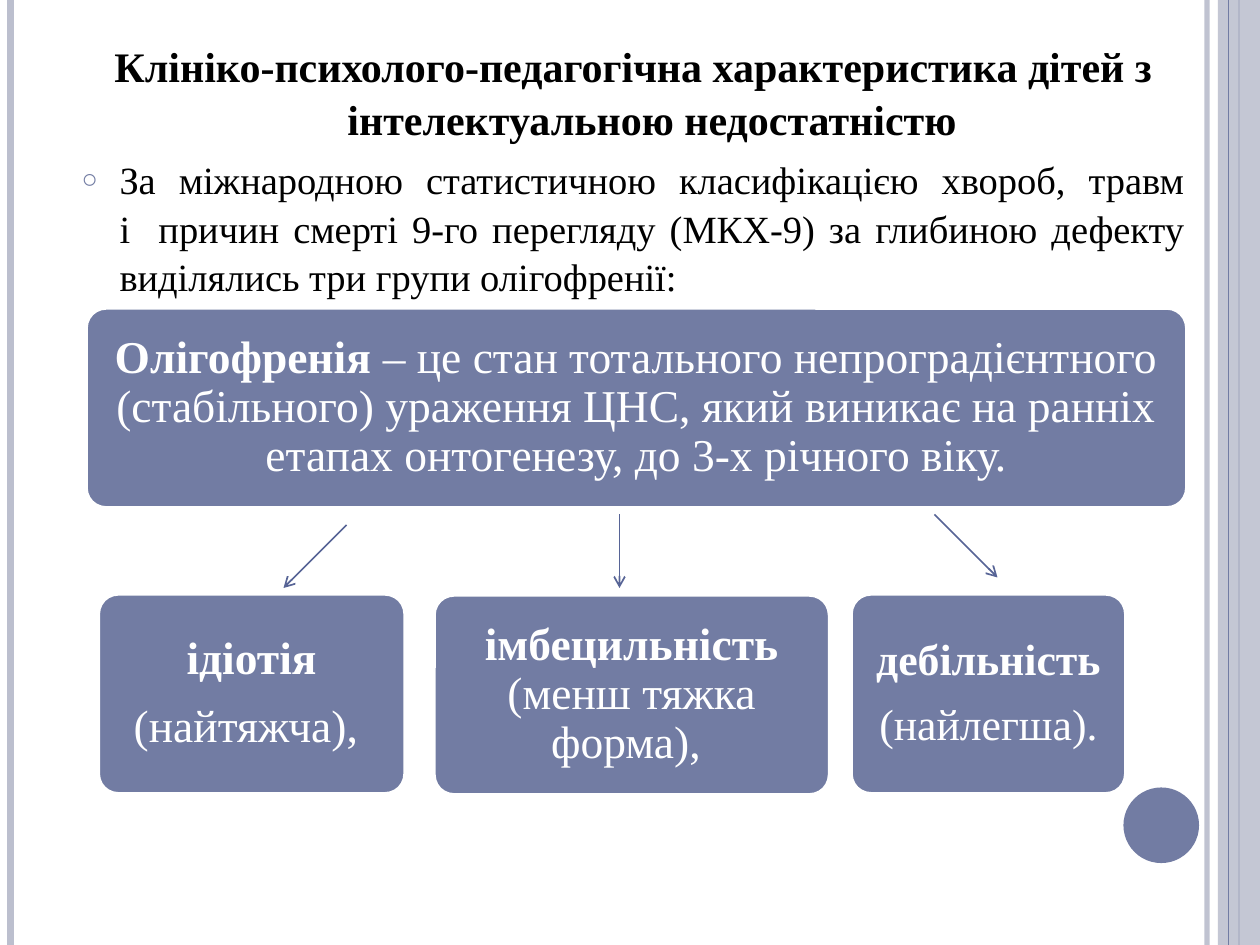
from typing import NamedTuple

from lxml import etree
from pptx import Presentation
from pptx.dml.color import RGBColor
from pptx.enum.shapes import MSO_CONNECTOR, MSO_SHAPE
from pptx.enum.text import MSO_ANCHOR, PP_ALIGN
from pptx.oxml.ns import qn
from pptx.util import Pt

STRAIGHT = MSO_CONNECTOR.STRAIGHT
RECTANGLE = MSO_SHAPE.RECTANGLE
ROUNDED = MSO_SHAPE.ROUNDED_RECTANGLE
OVAL = MSO_SHAPE.OVAL
CENTER = PP_ALIGN.CENTER
JUSTIFY = PP_ALIGN.JUSTIFY
MIDDLE = MSO_ANCHOR.MIDDLE

BLACK = RGBColor(0x00, 0x00, 0x00)
WHITE = RGBColor(0xFF, 0xFF, 0xFF)
SLATE = RGBColor(0x72, 0x7C, 0xA3)
PALE = RGBColor(0xBC, 0xBF, 0xCE)
ARROW = RGBColor(0x57, 0x64, 0x96)
FONT = "Times New Roman"
WIDTH, HEIGHT = 720, 540
HANGING = 21.6


class Piece(NamedTuple):
    text: str
    bold: bool = False


class Card(NamedTuple):
    left: float
    top: float
    width: float
    paragraphs: list[list[Piece]]
    size: float = 26
    inset: float = 7.8


class Line(NamedTuple):
    start: tuple[float, float]
    end: tuple[float, float]
    color: RGBColor
    width: float
    opacity: int = 100
    arrow: bool = False


def rail(x: float, color: RGBColor, width: float, opacity: int = 100) -> Line:
    """Describe a vertical line over the full slide height."""
    return Line((x, 0), (x, HEIGHT), color, width, opacity)


RAILS = [rail(689.8, PALE, 3, 93), rail(6, PALE, 4.5), rail(708, SLATE, 1.5)]
INNER_RAIL = rail(702, SLATE, 0.75)

CARDS = [
    Card(49.2, 176, 629, [[
        Piece("Олігофренія", True),
        Piece(" – це стан тотального непроградієнтного (стабільного) ураження ЦНС, "
              "який виникає на ранніх етапах онтогенезу, до 3-х річного віку."),
    ]]),
    Card(56.2, 339.4, 175.3, [[Piece("ідіотія", True)], [Piece("(найтяжча), ")]]),
    Card(486.3, 339.4, 157, [[Piece("дебільність", True)], [Piece("(найлегша).")]], 25, 7.2),
    Card(248, 340, 226, [[Piece("імбецильність", True), Piece(" (менш тяжка форма), ")]]),
]
CARD_HEIGHT = 114.2

ARROWS = [
    Line((198, 300), (162, 336), ARROW, 1, arrow=True),
    Line((354, 294), (354, 336), ARROW, 1, arrow=True),
    Line((534, 294), (570, 330), ARROW, 1, arrow=True),
]

TITLE = "Клініко-психолого-педагогічна характеристика дітей з інтелектуальною недостатністю"
INTRODUCTION = (
    "За  міжнародною  статистичною  класифікацією  хвороб,  травм і  причин смерті "
    "9-го перегляду (МКХ-9) за глибиною дефекту виділялись три групи олігофренії: "
)


def set_opacity(fill, opacity: int) -> None:
    """Give a solid fill element an opacity in percent."""
    color = fill.find(qn("a:srgbClr"))
    etree.SubElement(color, qn("a:alpha"), val=str(opacity * 1000))


def add_line(slide, line: Line) -> None:
    """Draw a straight line, optionally with an arrowhead at its end."""
    connector = slide.shapes.add_connector(
        STRAIGHT, *(Pt(value) for value in (*line.start, *line.end)))
    connector.line.color.rgb = line.color
    connector.line.width = Pt(line.width)
    properties = connector.element.spPr
    outline = properties.find(qn("a:ln"))
    if line.opacity < 100:
        set_opacity(outline.find(qn("a:solidFill")), line.opacity)
    if line.arrow:
        etree.SubElement(outline, qn("a:tailEnd"), type="arrow")
    etree.SubElement(properties, qn("a:effectLst"))


def add_filled(slide, kind, left: float, top: float, width: float, height: float,
               color: RGBColor):
    """Add a preset shape with a plain fill and no outline or shadow."""
    shape = slide.shapes.add_shape(kind, Pt(left), Pt(top), Pt(width), Pt(height))
    shape.shadow.inherit = False
    shape.fill.solid()
    shape.fill.fore_color.rgb = color
    shape.line.fill.background()
    return shape


def write_paragraph(frame, pieces: list[Piece], *, size: float, color: RGBColor,
                    alignment=CENTER, spacing: float = 1, before: float = 0,
                    hanging: float = 0, bullet: str = "") -> None:
    """Write one formatted paragraph, using the empty first one if it is free."""
    first = frame.paragraphs[0]
    paragraph = frame.add_paragraph() if first.runs else first
    paragraph.alignment = alignment
    paragraph.line_spacing = spacing
    paragraph.space_before = Pt(before)
    properties = paragraph._p.get_or_add_pPr()
    if hanging:
        properties.set("marL", str(Pt(hanging)))
        properties.set("indent", str(-Pt(hanging)))
    if bullet:
        bullet_color = etree.SubElement(properties, qn("a:buClr"))
        etree.SubElement(bullet_color, qn("a:srgbClr"), val=str(SLATE))
        etree.SubElement(properties, qn("a:buSzPct"), val="70000")
        etree.SubElement(properties, qn("a:buFont"), typeface=FONT)
        etree.SubElement(properties, qn("a:buChar"), char=bullet)
    for piece in pieces:
        run = paragraph.add_run()
        run.text = piece.text
        run.font.name = FONT
        run.font.size = Pt(size)
        run.font.bold = piece.bold
        run.font.color.rgb = color


def add_card(slide, card: Card) -> None:
    """Draw a rounded card with centred white text."""
    shape = add_filled(slide, ROUNDED, card.left, card.top, card.width, CARD_HEIGHT, SLATE)
    shape.adjustments[0] = 0.1
    shape.line.color.rgb = WHITE
    shape.line.width = Pt(2)
    frame = shape.text_frame
    frame.word_wrap = True
    frame.vertical_anchor = MIDDLE
    frame.margin_left = frame.margin_right = Pt(card.inset)
    frame.margin_top = frame.margin_bottom = Pt(card.inset)
    for index, pieces in enumerate(card.paragraphs):
        write_paragraph(frame, pieces, size=card.size, color=WHITE, spacing=0.9,
                        before=0.4 * card.size if index else 0)


def add_body(slide) -> None:
    """Add the heading and the bulleted introduction."""
    box = slide.shapes.add_textbox(Pt(39.6), Pt(18), Pt(644.4), Pt(444))
    frame = box.text_frame
    frame.word_wrap = True
    write_paragraph(frame, [Piece(TITLE, True)], size=24, color=BLACK, spacing=1.05,
                    before=6, hanging=HANGING)
    write_paragraph(frame, [Piece(INTRODUCTION)], size=22, color=BLACK, alignment=JUSTIFY,
                    spacing=1.05, before=6, hanging=HANGING, bullet="○")


def main() -> None:
    """Build the slide and save the presentation."""
    presentation = Presentation()
    presentation.slide_width, presentation.slide_height = Pt(WIDTH), Pt(HEIGHT)
    slide = presentation.slides.add_slide(presentation.slide_layouts[6])
    for line in RAILS:
        add_line(slide, line)
    band = add_filled(slide, RECTANGLE, 696, 0, 24, HEIGHT, PALE)
    set_opacity(band.element.spPr.find(qn("a:solidFill")), 87)
    add_line(slide, INNER_RAIL)
    add_filled(slide, OVAL, 642, 450, 43.2, 43.2, SLATE)
    add_body(slide)
    for card in CARDS:
        add_card(slide, card)
    for arrow in ARROWS:
        add_line(slide, arrow)
    presentation.save("out.pptx")


if __name__ == "__main__":
    main()
